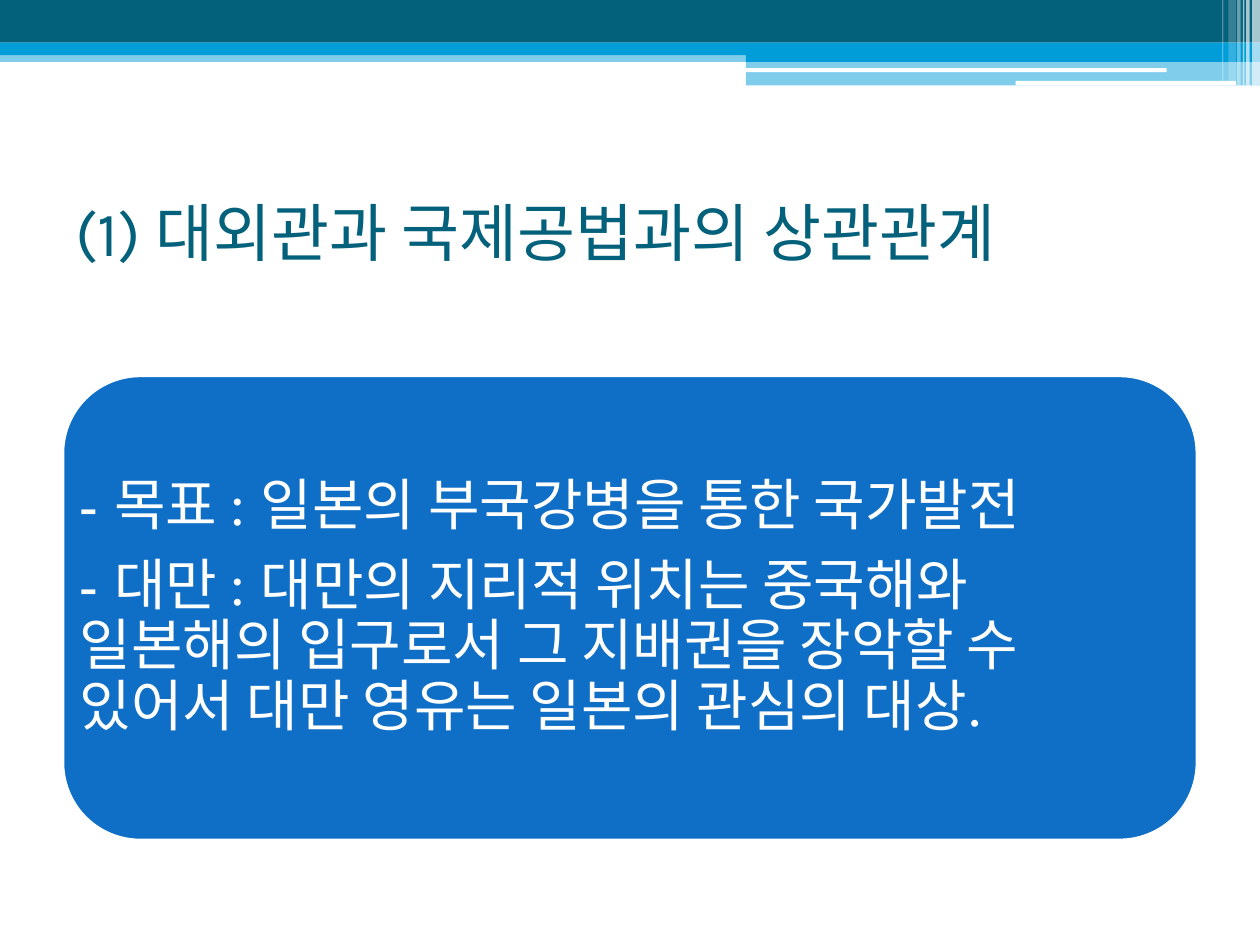
from pptx import Presentation
from pptx.dml.color import RGBColor
from pptx.enum.shapes import MSO_SHAPE
from pptx.enum.text import MSO_ANCHOR, PP_ALIGN
from pptx.oxml.xmlchemy import OxmlElement
from pptx.util import Pt

COLORS = {"teal": "04617B", "sky": "009DD9", "blue": "0F6FC6", "white": "FFFFFF"}

TITLE = "(1) 대외관과 국제공법과의 상관관계"
POINTS = [
    "- 목표 : 일본의 부국강병을 통한 국가발전",
    "- 대만 : 대만의 지리적 위치는 중국해와 일본해의 입구로서 "
    "그 지배권을 장악할 수 있어서 대만 영유는 일본의 관심의 대상.",
]


def rgb(color):
    return RGBColor.from_string(COLORS[color])


def add_panel(slide, box, color, opacity=100, kind=MSO_SHAPE.RECTANGLE):
    """Filled shape without outline; opacity in percent."""
    panel = slide.shapes.add_shape(kind, *map(Pt, box))
    panel.shadow.inherit = False
    panel.fill.solid()
    panel.fill.fore_color.rgb = rgb(color)
    panel.line.fill.background()
    if opacity < 100:
        alpha = OxmlElement("a:alpha")
        alpha.set("val", str(opacity * 1000))
        panel.fill._xPr.solidFill[0].append(alpha)
    return panel


def add_text(slide, box, lines, font, paragraph_format, inset):
    """Middle-anchored text, one paragraph for each line."""
    frame = slide.shapes.add_textbox(*map(Pt, box)).text_frame
    frame_format = {"word_wrap": True, "vertical_anchor": MSO_ANCHOR.MIDDLE}
    for side in ("left", "top", "right", "bottom"):
        frame_format[f"margin_{side}"] = Pt(inset)
    for name, value in frame_format.items():
        setattr(frame, name, value)
    for index, line in enumerate(lines):
        paragraph = frame.add_paragraph() if index else frame.paragraphs[0]
        for name, value in paragraph_format.items():
            setattr(paragraph, name, value)
        run = paragraph.add_run()
        run.text = line
        run.font.name, run.font.size = font["name"], Pt(font["size"])
        run.font.color.rgb = rgb(font["color"])


def add_header(slide, box):
    left, top, width, height = box
    right = left + width
    step = left + 426.2  # where the deeper right-hand part begins

    # Horizontal bands: left, offset from top, height, colour, opacity
    bands = [
        (left, 28.8, 6.6, "sky", 50),
        (left, 0, 24.4, "teal", 100),
        (left, 24.4, 7.2, "sky", 100),
        (step, 28.2, 7.2, "sky", 100),
        (step, 35, 13.8, "sky", 50),
    ]
    for start, offset, depth, color, opacity in bands:
        add_panel(slide, (start, top + offset, right - start, depth), color, opacity)

    # Thin white bars: left, offset from top, width, height
    for start, offset, length, depth in [(425.5, 39, 241.2, 2.2), (580.3, 46.2, 126, 2.6)]:
        add_panel(slide, (left + start, top + offset, length, depth), "white",
                  kind=MSO_SHAPE.ROUNDED_RECTANGLE)

    # Vertical stripes: distance from right edge, width, height, opacity
    stripes = [
        (4.5, 4.5, height, 65),
        (7.9, 2, height, 65),
        (9.7, 0.8, height, 60),
        (13, 2, height, 40),
        (18, 4.3, height - 2.6, 20),
        (21.6, 0.7, height - 2.6, 30),
    ]
    for distance, thickness, depth, opacity in stripes:
        add_panel(slide, (right - distance, top, thickness, depth), "white", opacity)


def add_title(slide, box):
    add_text(slide, box, [TITLE], {"name": "Karla", "size": 36, "color": "teal"},
             {"alignment": PP_ALIGN.LEFT}, inset=7.2)


def add_content(slide, box):
    card = add_panel(slide, box, "blue", kind=MSO_SHAPE.ROUNDED_RECTANGLE)
    card.line.color.rgb = rgb("white")
    card.line.width = Pt(1.5)
    add_text(slide, box, POINTS,
             {"name": "TeX Gyre Schola", "size": 32, "color": "white"},
             {"alignment": PP_ALIGN.LEFT, "line_spacing": 0.9, "space_after": Pt(11)},
             inset=9.6)


def main():
    presentation = Presentation()
    presentation.slide_width, presentation.slide_height = Pt(720), Pt(540)
    slide = presentation.slides.add_slide(presentation.slide_layouts[6])
    add_header(slide, (0, 0, 720, 48.8))
    add_title(slide, (36, 90, 648, 84))
    add_content(slide, (36, 214.8, 648, 265.2))
    presentation.save("out.pptx")


if __name__ == "__main__":
    main()
